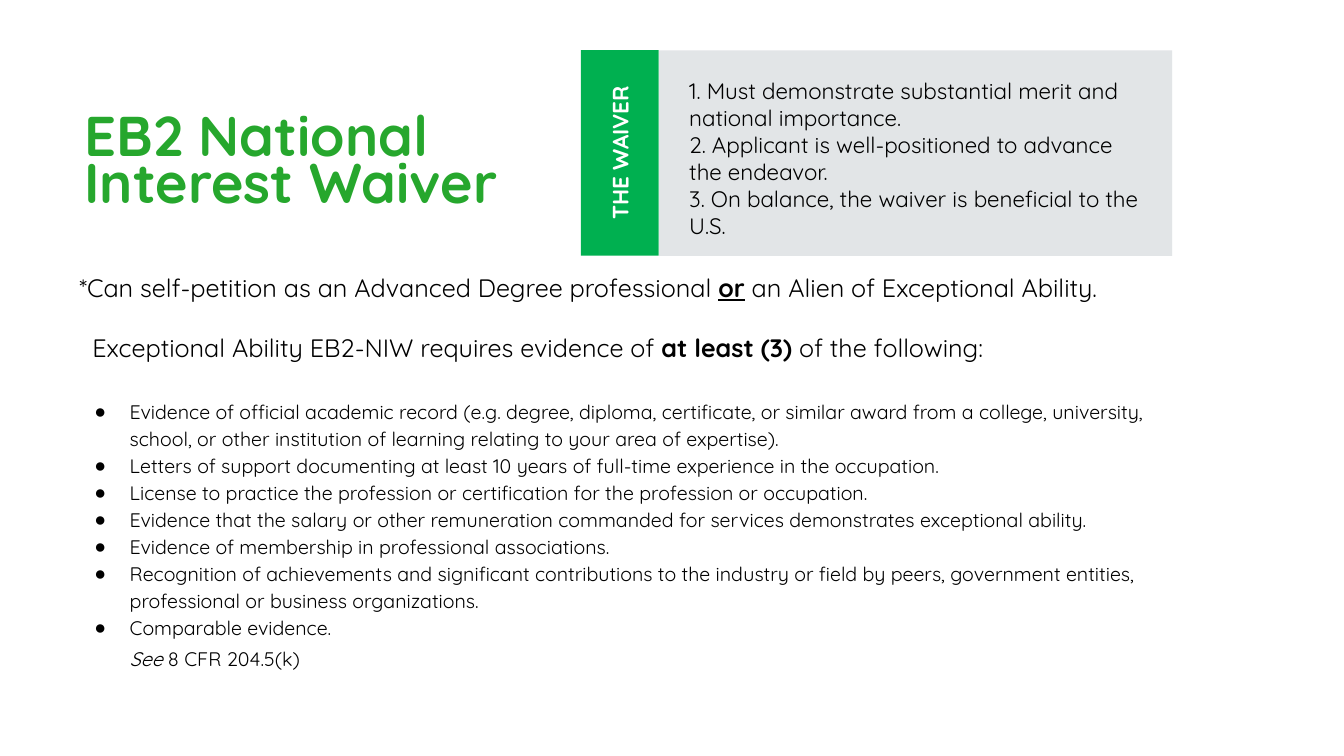
from lxml import etree
from pptx import Presentation
from pptx.dml.color import RGBColor
from pptx.enum import shapes, text
from pptx.oxml import ns
from pptx.util import Cm, Pt

FONT = "Quicksand"
BLACK, WHITE = "000000", "FFFFFF"
TITLE_GREEN, LABEL_GREEN, PANEL_GREY = "26A72D", "00B050", "DFE3E5"

CRITERIA = [
    "1. Must demonstrate substantial merit and national importance.",
    "2. Applicant is well-positioned to advance the endeavor.",
    "3. On balance, the waiver is beneficial to the U.S.",
]
EVIDENCE = [
    "Evidence of official academic record (e.g. degree, diploma, certificate, or similar award "
    "from a college, university, school, or other institution of learning relating to your area "
    "of expertise).",
    "Letters of support documenting at least 10 years of full-time experience in the occupation.",
    "License to practice the profession or certification for the profession or occupation.",
    "Evidence that the salary or other remuneration commanded for services demonstrates "
    "exceptional ability.",
    "Evidence of membership in professional associations.",
    "Recognition of achievements and significant contributions to the industry or field by peers, "
    "government entities, professional or business organizations.",
    "Comparable evidence.",
]


def color(value):
    return RGBColor.from_string(value)


def add_child(parent, tag, **attributes):
    return etree.SubElement(parent, ns.qn(tag), attributes)


def set_frame(frame, margins, anchor=text.MSO_ANCHOR.TOP):
    """Margins are left, top, right and bottom in centimetres."""
    frame.word_wrap = True
    frame.auto_size = text.MSO_AUTO_SIZE.NONE
    frame.vertical_anchor = anchor
    (frame.margin_left, frame.margin_top,
     frame.margin_right, frame.margin_bottom) = [Cm(margin) for margin in margins]


def add_bullet(para):
    properties = para._p.get_or_add_pPr()
    add_child(add_child(properties, "a:buClr"), "a:srgbClr", val=BLACK)
    add_child(properties, "a:buFont", typeface="Arial")
    add_child(properties, "a:buChar", char="●")


def write(frame, content, size=14, fill=BLACK, bold=False, align=text.PP_ALIGN.LEFT,
          spacing=1.0, before=0, indent=0.0, hanging=0.0, bullet=False):
    """Add a paragraph; content is a string or a list of (words, style) pairs."""
    para = frame.paragraphs[0]
    if para.runs:
        para = frame.add_paragraph()
    properties = para._p.get_or_add_pPr()
    properties.set("marL", str(Cm(indent)))
    properties.set("indent", str(-Cm(hanging)))
    if bullet:
        add_bullet(para)
    para.alignment = align
    para.line_spacing = spacing
    para.space_before = Pt(before)
    spans = [(content, "")] if isinstance(content, str) else content
    for words, style in spans:
        span = para.add_run()
        span.text = words
        span.font.name = FONT
        span.font.size = Pt(size)
        span.font.color.rgb = color(fill)
        span.font.bold = bold or "bold" in style
        span.font.italic = "italic" in style
        span.font.underline = "underline" in style


def add_panel(page, left, top, width, height, fill, opacity=100):
    panel = page.shapes.add_shape(shapes.MSO_SHAPE.RECTANGLE,
                                  Cm(left), Cm(top), Cm(width), Cm(height))
    panel.shadow.inherit = False
    panel.line.fill.background()
    panel.fill.solid()
    panel.fill.fore_color.rgb = color(fill)
    if opacity < 100:
        tint = panel._element.spPr.find(ns.qn("a:solidFill"))[0]
        add_child(tint, "a:alpha", val=str(opacity * 1000))
    return panel


def add_requirements(page):
    box = page.shapes.add_textbox(Cm(1.75), Cm(6.73), Cm(28.93), Cm(10.21))
    frame = box.text_frame
    set_frame(frame, (0.25, 0.13, 0.25, 0.13))
    write(frame, [("*Can self-petition as an Advanced Degree professional ", ""),
                  ("or", "bold underline"),
                  (" an Alien of Exceptional Ability.", "")], size=18)
    write(frame, [("Exceptional Ability EB2-NIW requires evidence of ", ""),
                  ("at least (3) ", "bold"),
                  ("of the following:", "")], size=18, before=21.3, indent=0.33)
    for number, item in enumerate(EVIDENCE):
        write(frame, item, spacing=1.15, before=0 if number else 24,
              indent=1.27, hanging=0.89, bullet=True)
    write(frame, [("See", "italic"), (" 8 CFR 204.5(k)", "")],
          spacing=1.15, before=3, indent=1.27)


def add_title(page):
    title = page.shapes.title
    title.left, title.top, title.width, title.height = Cm(2.13), Cm(2.87), Cm(12.24), Cm(2.01)
    set_frame(title.text_frame, (0, 0.13, 0, 0))
    write(title.text_frame, "EB2 National Interest Waiver", size=40,
          fill=TITLE_GREEN, bold=True, spacing=0.7)


def add_waiver(page):
    panel = add_panel(page, 16.61, 1.27, 12.93, 5.18, PANEL_GREY, opacity=90)
    set_frame(panel.text_frame, (0.76, 0.25, 0.76, 0), text.MSO_ANCHOR.MIDDLE)
    for criterion in CRITERIA:
        write(panel.text_frame, criterion, size=16)

    label = add_panel(page, 13.03, 2.87, 5.18, 1.96, LABEL_GREEN)
    label.rotation = 270
    set_frame(label.text_frame, (0, 0, 0, 0), text.MSO_ANCHOR.MIDDLE)
    write(label.text_frame, "THE WAIVER", size=16, fill=WHITE, bold=True,
          align=text.PP_ALIGN.CENTER)


def main():
    deck = Presentation()
    deck.slide_width, deck.slide_height = Cm(33.87), Cm(19.05)
    page = deck.slides.add_slide(deck.slide_layouts[5])
    page.background.fill.solid()
    page.background.fill.fore_color.rgb = color(WHITE)
    add_requirements(page)
    add_title(page)
    add_waiver(page)
    deck.save("out.pptx")


if __name__ == "__main__":
    main()
